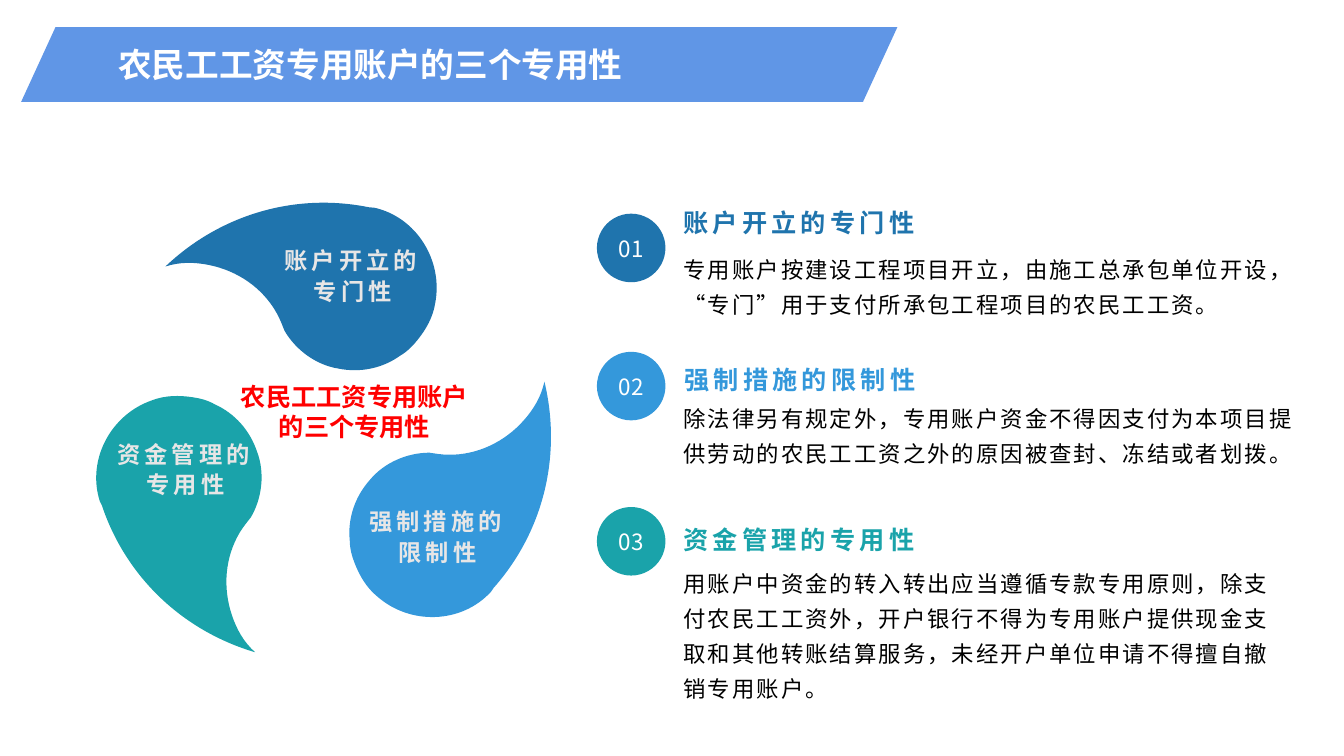
from dataclasses import dataclass
from math import cos, radians, sin

from lxml.etree import SubElement
from pptx import Presentation
from pptx.dml.color import RGBColor
from pptx.enum.lang import MSO_LANGUAGE_ID as Lang
from pptx.enum.shapes import MSO_SHAPE as Preset
from pptx.enum.text import MSO_ANCHOR as Anchor, PP_ALIGN as Align
from pptx.oxml.ns import qn
from pptx.util import Inches, Pt

Point = tuple[float, float]
Box = tuple[float, float, float, float]


@dataclass(frozen=True)
class Theme:
    """Colours, fonts and type sizes of the slide."""
    account: str = "1F74AD"
    limits: str = "3498DB"
    funds: str = "1AA3AA"
    banner: str = "6096E6"
    white: str = "FFFFFF"
    pale: str = "E7E6E6"
    red: str = "FF0000"
    black: str = "000000"
    chinese: str = "Noto Sans CJK SC"
    latin: str = "Arial"
    title_size: float = 24
    heading_size: float = 18
    blade_size: float = 16.6
    body_size: float = 16


@dataclass(frozen=True)
class TextStyle:
    """Typography and placement of text within its box."""
    size: float
    color: str
    bold: bool = False
    tracking: int = 0
    leading: float = 1.0
    align: Align = Align.LEFT
    anchor: Anchor = Anchor.TOP
    inset_top: float = 0.05
    inset_bottom: float = 0.05
    font: str = Theme.chinese
    wrap: bool = True


@dataclass(frozen=True)
class Feature:
    """One dedicated property: its blade, badge and explanation."""
    number: str
    name: str
    body: str
    color: str
    turn: float
    label_at: Point
    badge_top: float
    heading_at: Point
    body_box: Box


THEME = Theme()
TITLE = TextStyle(THEME.title_size, THEME.white, bold=True, anchor=Anchor.MIDDLE, font=THEME.latin)
CORE = TextStyle(THEME.heading_size, THEME.red, bold=True, align=Align.CENTER, wrap=False)
BLADE_LABEL = TextStyle(THEME.blade_size, THEME.pale, bold=True, tracking=300, leading=1.1,
                        align=Align.CENTER, anchor=Anchor.MIDDLE)
BADGE = TextStyle(THEME.body_size, THEME.white, leading=1.2, align=Align.CENTER,
                  anchor=Anchor.MIDDLE, inset_top=0)
BODY = TextStyle(THEME.body_size, THEME.black, tracking=150, leading=1.3, inset_top=0)

FEATURES = [
    Feature("03", "资金管理的专用性",
            "用账户中资金的转入转出应当遵循专款专用原则，除支付农民工工资外，开户银行不得为专用账户提供现金支取和其他转账结算服务，未经开户单位申请不得擅自撤销专用账户。",
            THEME.funds, 0, (1.04, 4.27), 5.03, (6.68, 5.08), (6.68, 5.58, 6.17, 0.78)),
    Feature("02", "强制措施的限制性",
            "除法律另有规定外，专用账户资金不得因支付为本项目提供劳动的农民工工资之外的原因被查封、冻结或者划拨。",
            THEME.limits, -120, (3.54, 4.94), 3.49, (6.69, 3.49), (6.68, 3.94, 6.28, 0.42)),
    Feature("01", "账户开立的专门性",
            "专用账户按建设工程项目开立，由施工总承包单位开设，“专门”用于支付所承包工程项目的农民工工资。",
            THEME.account, 120, (2.7, 2.35), 2.12, (6.68, 1.94), (6.68, 2.46, 6.21, 0.42)),
]

HUB = (3.19, 4.3)
BLADE_ROTATION = 283
BLADE_START = (2.55, 4.48)
BLADE_CURVES = [
    ((2.63, 4.69), (2.6, 4.94), (2.49, 5.13)),
    ((2.45, 5.18), (2.41, 5.23), (2.38, 5.28)),
    ((2.23, 5.53), (2.21, 5.83), (2.3, 6.1)),
    ((2.35, 6.25), (2.42, 6.37), (2.53, 6.47)),
    ((1.82, 6.26), (1.25, 5.73), (1.01, 5.01)),
    ((0.99, 4.97), (0.99, 4.97), (0.99, 4.97)),
    ((0.86, 4.56), (1.1, 4.11), (1.51, 3.97)),
    ((1.64, 3.92), (1.78, 3.92), (1.91, 3.94)),
    ((1.98, 3.95), (2.06, 3.97), (2.13, 4.01)),
    ((2.33, 4.1), (2.48, 4.27), (2.55, 4.48)),
]


def turn_about_hub(point: Point, degrees: float) -> Point:
    """Turn a point clockwise about the hub."""
    x, y = point[0] - HUB[0], point[1] - HUB[1]
    c, s = cos(radians(degrees)), sin(radians(degrees))
    return HUB[0] + x * c - y * s, HUB[1] + x * s + y * c


def paint(shape, color: str) -> None:
    """Give a shape a flat fill without line or shadow."""
    shape.shadow.inherit = False
    shape.fill.solid()
    shape.fill.fore_color.rgb = RGBColor.from_string(color)
    shape.line.fill.background()


def write(shape, text: str, style: TextStyle) -> None:
    """Set the text of a shape in a given style."""
    frame = shape.text_frame
    frame.text = text
    frame.word_wrap = style.wrap
    frame.vertical_anchor = style.anchor
    frame.margin_top = Inches(style.inset_top)
    frame.margin_bottom = Inches(style.inset_bottom)
    for paragraph in frame.paragraphs:
        paragraph.alignment = style.align
        paragraph.line_spacing = style.leading
        for run in paragraph.runs:
            run.font.size = Pt(style.size)
            run.font.bold = style.bold
            run.font.name = style.font
            run.font.language_id = Lang.SIMPLIFIED_CHINESE
            run.font.color.rgb = RGBColor.from_string(style.color)
            properties = run._r.get_or_add_rPr()
            SubElement(properties, qn("a:ea")).set("typeface", THEME.chinese)
            if style.tracking:
                properties.set("spc", str(style.tracking))


def add_text(slide, box: Box, text: str, style: TextStyle) -> None:
    """Add a text box."""
    write(slide.shapes.add_textbox(*map(Inches, box)), text, style)


def add_preset(slide, preset: Preset, box: Box, color: str, text: str, style: TextStyle):
    """Add a filled preset shape with text."""
    shape = slide.shapes.add_shape(preset, *map(Inches, box))
    paint(shape, color)
    write(shape, text, style)
    return shape


def bend(shape) -> None:
    """Turn each three successive segments of an outline into one cubic curve."""
    segments = list(shape._element.iter(qn("a:lnTo")))
    for curve, *others in zip(segments[::3], segments[1::3], segments[2::3]):
        bezier = curve.makeelement(qn("a:cubicBezTo"))
        curve.addprevious(bezier)
        for segment in (curve, *others):
            bezier.append(segment[0])
            segment.getparent().remove(segment)


def add_blade(slide, feature: Feature) -> None:
    """Add the pinwheel blade of a feature."""
    corners = [BLADE_START, *(point for curve in BLADE_CURVES for point in curve)]
    turned = [turn_about_hub(point, feature.turn - BLADE_ROTATION) for point in corners]
    start, *rest = [(Inches(x), Inches(y)) for x, y in turned]
    builder = slide.shapes.build_freeform(*start)
    builder.add_line_segments(rest, close=True)
    blade = builder.convert_to_shape()
    bend(blade)
    paint(blade, feature.color)
    center = ((blade.left + blade.width / 2) / Inches(1), (blade.top + blade.height / 2) / Inches(1))
    x, y = turn_about_hub(center, BLADE_ROTATION)
    blade.left = Inches(x) - blade.width // 2
    blade.top = Inches(y) - blade.height // 2
    blade.rotation = BLADE_ROTATION


def add_explanation(slide, feature: Feature) -> None:
    """Add the numbered badge, heading and body of a feature."""
    heading = TextStyle(THEME.heading_size, feature.color, bold=True, tracking=300,
                        leading=1.2, anchor=Anchor.BOTTOM, inset_bottom=0)
    add_preset(slide, Preset.OVAL, (5.92, feature.badge_top, 0.68, 0.68),
               feature.color, feature.number, BADGE)
    add_text(slide, (*feature.heading_at, 4.86, 0.42), feature.name, heading)
    add_text(slide, feature.body_box, feature.body, BODY)


def main() -> None:
    """Build and save the slide."""
    deck = Presentation()
    deck.slide_width, deck.slide_height = Inches(13.33), Inches(7.5)
    slide = deck.slides.add_slide(deck.slide_layouts[6])
    for feature in FEATURES:
        add_blade(slide, feature)
    for feature in FEATURES:
        add_explanation(slide, feature)
        add_text(slide, (*feature.label_at, 1.6, 0.74), feature.name, BLADE_LABEL)
    add_text(slide, (2.29, 3.73, 2.45, 0.71), "农民工工资专用账户\n的三个专用性", CORE)
    banner = add_preset(slide, Preset.PARALLELOGRAM, (0.21, 0.27, 8.69, 0.74),
                        THEME.banner, "农民工工资专用账户的三个专用性", TITLE)
    banner.adjustments[0] = 0.46
    deck.save("out.pptx")


if __name__ == "__main__":
    main()
